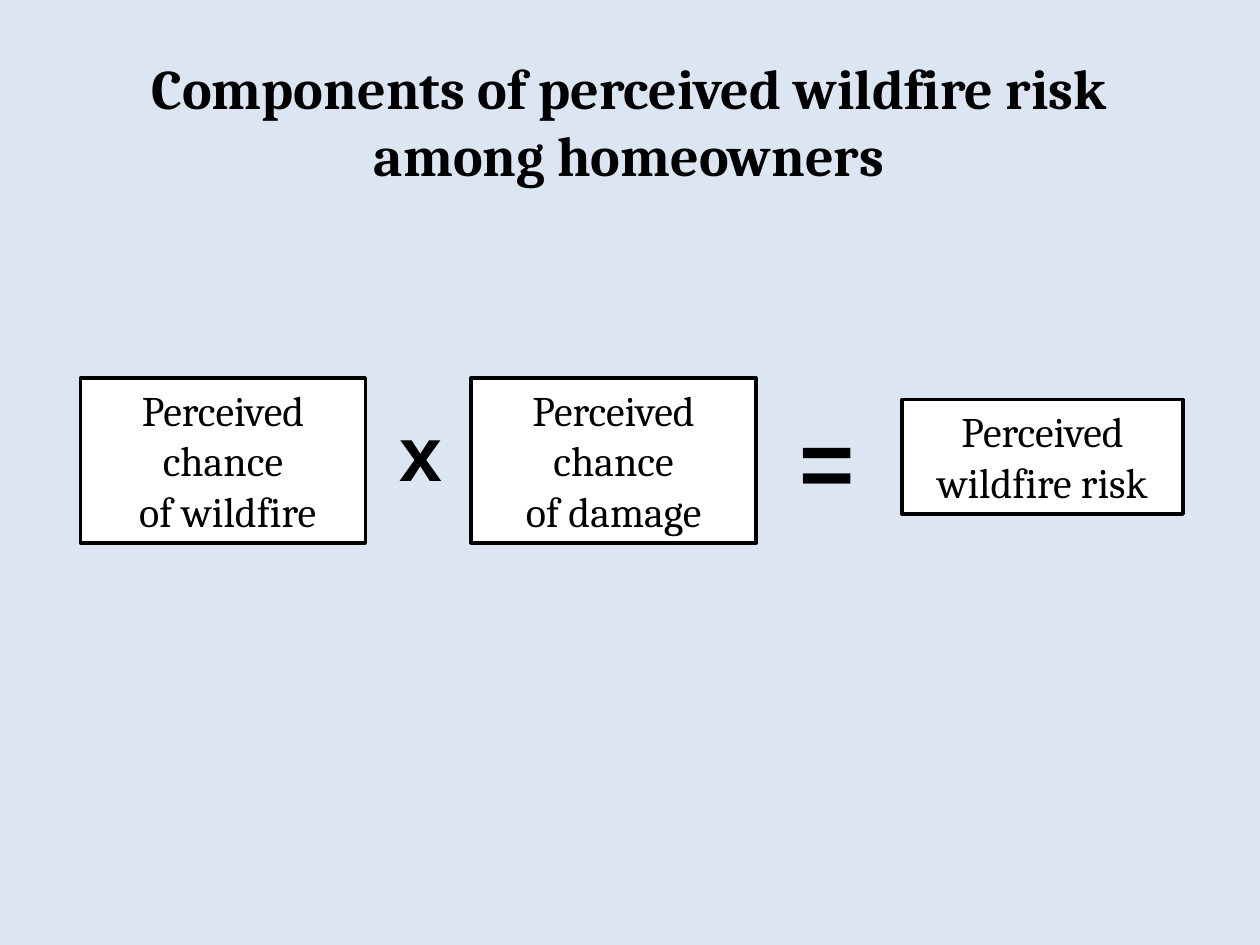
from pptx import Presentation
from pptx import util as u
from pptx.dml.color import RGBColor
from pptx.enum import shapes, text

BACKGROUND = RGBColor(0xDC, 0xE6, 0xF2)
BLACK = RGBColor(0x00, 0x00, 0x00)
WHITE = RGBColor(0xFF, 0xFF, 0xFF)

COLUMNS, ROWS = 100, 75


class SlideBuilder:
    """Holds the style and the current slide; lengths are columns and rows."""

    serif, sans = "Cambria", "Arial"

    def __init__(self, presentation):
        self.cell_width = presentation.slide_width / COLUMNS
        self.cell_height = presentation.slide_height / ROWS
        title_only = presentation.slide_layouts[5]
        self.slide = presentation.slides.add_slide(title_only)
        fill = self.slide.background.fill
        fill.solid()
        fill.fore_color.rgb = BACKGROUND

    def place(self, column, row, width, height):
        return (round(column * self.cell_width), round(row * self.cell_height),
                round(width * self.cell_width), round(height * self.cell_height))

    def set_text(self, shape, words, font, size, bold=False, wrap=True,
                 align=text.PP_ALIGN.CENTER, anchor=text.MSO_ANCHOR.MIDDLE):
        frame = shape.text_frame
        frame.text = words
        frame.word_wrap = wrap
        frame.vertical_anchor = anchor
        for paragraph in frame.paragraphs:
            paragraph.alignment = align
            for run in paragraph.runs:
                run.font.name = font
                run.font.size = u.Pt(size)
                run.font.bold = bold
                run.font.color.rgb = BLACK

    def title(self, words, *area):
        shape = self.slide.shapes.title
        shape.left, shape.top, shape.width, shape.height = self.place(*area)
        self.set_text(shape, words, self.serif, 32, bold=True)
        shape.text_frame.auto_size = text.MSO_AUTO_SIZE.NONE

    def box(self, words, *area):
        shape = self.slide.shapes.add_shape(
            shapes.MSO_SHAPE.RECTANGLE, *self.place(*area))
        shape.shadow.inherit = False
        shape.fill.solid()
        shape.fill.fore_color.rgb = WHITE
        shape.line.color.rgb = BLACK
        shape.line.width = u.Pt(2)
        self.set_text(shape, words, self.serif, 24, anchor=text.MSO_ANCHOR.TOP)
        shape.text_frame.auto_size = text.MSO_AUTO_SIZE.SHAPE_TO_FIT_TEXT

    def operator(self, symbol, size, *area):
        shape = self.slide.shapes.add_textbox(*self.place(*area))
        self.set_text(shape, symbol, self.sans, size, bold=True, wrap=False,
                      align=text.PP_ALIGN.LEFT, anchor=text.MSO_ANCHOR.TOP)
        shape.text_frame.auto_size = text.MSO_AUTO_SIZE.SHAPE_TO_FIT_TEXT


def main():
    presentation = Presentation()
    presentation.slide_width = u.Inches(10)
    presentation.slide_height = u.Inches(7.5)
    builder = SlideBuilder(presentation)

    # Heading
    builder.title("Components of perceived wildfire risk among homeowners",
                  5.8, 5, 88.3, 9.2)

    # Factors, one step of 31 columns apart
    factors = ("Perceived chance\n of wildfire", "Perceived chance\nof damage")
    for index, factor in enumerate(factors):
        builder.box(factor, 6.4 + 31 * index, 30, 22.6, 13.1)

    # Product
    builder.box("Perceived wildfire risk", 71.6, 31.7, 22.3, 9.1)

    # Operators between the boxes
    builder.operator("x", 44, 30.7, 31.6, 5.5, 8.4)
    builder.operator("=", 54, 62.5, 31.5, 6.4, 10.1)

    presentation.save("out.pptx")


if __name__ == "__main__":
    main()
